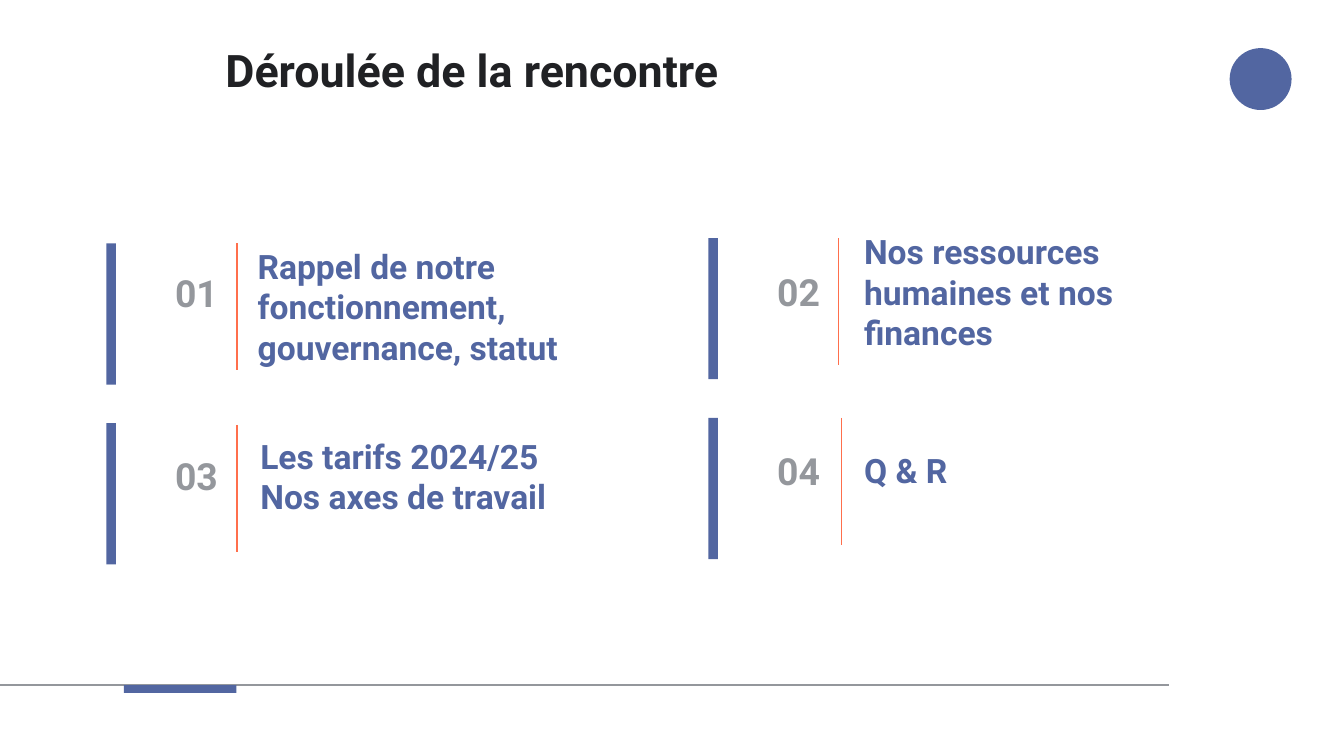
from lxml.etree import SubElement
from pptx import Presentation
from pptx.dml.color import RGBColor
from pptx.enum.shapes import MSO_CONNECTOR, MSO_SHAPE
from pptx.enum.text import MSO_ANCHOR, MSO_AUTO_SIZE, PP_ALIGN
from pptx.oxml.ns import qn
from pptx.util import Cm, Pt

BLUE = RGBColor(0x52, 0x66, 0xA1)
GREY = RGBColor(0x94, 0x97, 0x9C)
ORANGE = RGBColor(0xFF, 0x6F, 0x4C)
DARK = RGBColor(0x20, 0x21, 0x24)
WHITE = RGBColor(0xFF, 0xFF, 0xFF)

CARD_W, CARD_H, BAR_W = 9.5, 2.67, 0.18
LEFT_X, RIGHT_X = 2.01, 13.39
ROW_STEP = 3.4

# number, card (left, top), number top, divider (left, top), text (left, top, width), lines
ITEMS = [
    ("01", (LEFT_X, 4.6), 5.1, (4.48, 4.6), (4.62, 5.06, 7.39),
     ["Rappel de notre fonctionnement, gouvernance, statut"]),
    ("02", (RIGHT_X, 4.5), 5.08, (15.85, 4.5), (16.08, 4.78, 7.75),
     ["Nos ressources humaines et nos finances"]),
    ("03", (LEFT_X, 4.6 + ROW_STEP), 8.56, (4.48, 8.03), (4.67, 8.26, 6.4),
     ["Les tarifs 2024/25", "Nos axes de travail"]),
    ("04", (RIGHT_X, 4.5 + ROW_STEP), 8.46, (15.9, 7.9), (16.08, 8.16, 6.4),
     ["Q & R"]),
]


def write(s, lines, size=18, color=BLUE, align=PP_ALIGN.LEFT,
          anchor=MSO_ANCHOR.MIDDLE, font="Roboto"):
    tf = s.text_frame
    tf.word_wrap = True
    tf.auto_size = MSO_AUTO_SIZE.NONE
    tf.vertical_anchor = anchor
    tf.margin_left = tf.margin_right = tf.margin_top = tf.margin_bottom = Cm(0.25)
    for i, line in enumerate(lines):
        p = tf.add_paragraph() if i else tf.paragraphs[0]
        p.alignment = align
        p.line_spacing = 1.0
        p.space_before = Pt(0)
        r = p.add_run()
        r.text = line
        r.font.name, r.font.size, r.font.bold = font, Pt(size), True
        r.font.color.rgb = color


class AgendaSlide:
    def __init__(self, prs):
        self.slide = prs.slides.add_slide(prs.slide_layouts[5])
        self.shapes = self.slide.shapes

    def title(self, text, x, y, w, h):
        s = self.shapes.title
        s.left, s.top, s.width, s.height = Cm(x), Cm(y), Cm(w), Cm(h)
        write(s, [text], size=24, color=DARK, anchor=MSO_ANCHOR.TOP)

    def block(self, x, y, w, h, fill=BLUE, kind=MSO_SHAPE.RECTANGLE):
        s = self.shapes.add_shape(kind, Cm(x), Cm(y), Cm(w), Cm(h))
        s.shadow.inherit = False
        s.fill.solid()
        s.fill.fore_color.rgb = fill
        s.line.fill.background()

    def line(self, x1, y1, x2, y2, color):
        s = self.shapes.add_connector(MSO_CONNECTOR.STRAIGHT,
                                      Cm(x1), Cm(y1), Cm(x2), Cm(y2))
        s.line.color.rgb = color
        s.line.width = Pt(0.75)
        SubElement(s._element.spPr, qn("a:effectLst"))

    def text(self, lines, x, y, w, h, **style):
        write(self.shapes.add_textbox(Cm(x), Cm(y), Cm(w), Cm(h)), lines, **style)

    def item(self, number, card, number_top, divider, box, lines):
        x, y = card
        self.block(x, y, CARD_W, CARD_H, fill=WHITE)
        self.block(x, y, BAR_W, CARD_H)
        self.text([number], x + 0.28, number_top, 2.08, 0.86,
                  size=20, color=GREY, align=PP_ALIGN.RIGHT)
        dx, dy = divider
        self.line(dx, dy, dx, dy + 2.4, ORANGE)
        self.text(lines, *box, 1.47)


def main():
    prs = Presentation()
    prs.slide_width, prs.slide_height = Cm(25.4), Cm(14.29)
    agenda = AgendaSlide(prs)

    # Footer rule with its accent
    agenda.line(-0.08, 12.95, 22.1, 12.95, GREY)
    agenda.block(2.34, 12.95, 2.13, 0.15)

    # Title and plain corner dot
    agenda.title("Déroulée de la rencontre", 4.01, 0.56, 21.41, 1.6)
    agenda.block(23.24, 0.91, 1.17, 1.17, kind=MSO_SHAPE.OVAL)

    # Agenda items
    for item in ITEMS:
        agenda.item(*item)

    prs.save("out.pptx")


if __name__ == "__main__":
    main()
